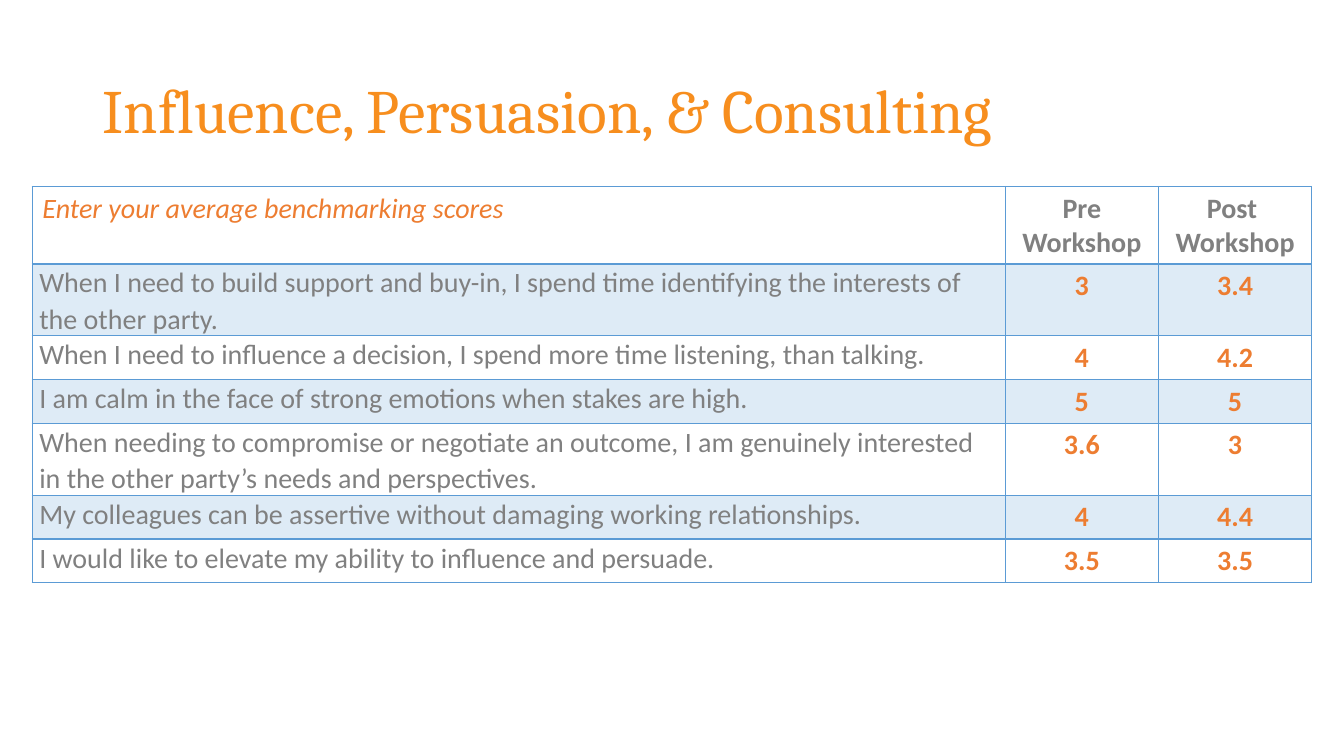
from dataclasses import dataclass
from typing import Any

from lxml import etree
from pptx import Presentation
from pptx.dml.color import RGBColor
from pptx.enum.text import MSO_ANCHOR, PP_ALIGN
from pptx.oxml.ns import qn
from pptx.util import Pt

LEFT, CENTER = PP_ALIGN.LEFT, PP_ALIGN.CENTER
MIDDLE = MSO_ANCHOR.MIDDLE
SCALE = 9144


@dataclass(frozen=True)
class Theme:
    title: str = "F78E1E"
    accent: str = "ED7D31"
    gray: str = "808080"
    blue: str = "5B9BD5"
    head: str = "Cambria"
    body: str = "Calibri"
    large: int = 44
    small: int = 20
    tint: int = 20


@dataclass(frozen=True)
class Score:
    text: str
    pre: str
    post: str


@dataclass(frozen=True)
class Style:
    font: dict[str, Any]
    color: str
    align: Any = LEFT
    space: float = 1.0


THEME = Theme()
BASE = {"name": THEME.body, "size": Pt(THEME.small), "bold": False, "italic": False}
TITLE = Style({"name": THEME.head, "size": Pt(THEME.large)}, THEME.title, space=0.9)
PROMPT = Style(BASE | {"italic": True}, THEME.accent)
LABEL = Style(BASE | {"bold": True}, THEME.gray, CENTER)
ITEM = Style(BASE, THEME.gray, space=1.07)
VALUE = Style(BASE | {"bold": True}, THEME.accent, CENTER)

COLS = (965, 152, 152)
ROW = 41
HEADS = ("Enter your average benchmarking scores", "Pre Workshop", "Post \nWorkshop")
SCORES = (
    Score("When I need to build support and buy-in, I spend time identifying "
          "the interests of the other party.", "3", "3.4"),
    Score("When I need to influence a decision, I spend more time listening, "
          "than talking.", "4", "4.2"),
    Score("I am calm in the face of strong emotions when stakes are high.", "5", "5"),
    Score("When needing to compromise or negotiate an outcome, I am genuinely "
          "interested in the other party’s needs and perspectives.", "3.6", "3"),
    Score("My colleagues can be assertive without damaging working "
          "relationships.", "4", "4.4"),
    Score("I would like to elevate my ability to influence and persuade.",
          "3.5", "3.5"),
)


def px(size: int) -> int:
    return size * SCALE


def apply(target: Any, values: dict[str, Any]) -> None:
    for name, value in values.items():
        setattr(target, name, value)


def write(frame: Any, text: str, style: Style) -> None:
    frame.text = text
    for para in frame.paragraphs:
        apply(para, {"alignment": style.align, "line_spacing": style.space})
        for run in para.runs:
            apply(run.font, style.font)
            run.font.color.rgb = RGBColor.from_string(style.color)


def shade(cell: Any, band: bool) -> None:
    if not band:
        cell.fill.background()
        return
    cell.fill.solid()
    cell.fill.fore_color.rgb = RGBColor.from_string(THEME.blue)
    color = cell._tc.tcPr.find(".//" + qn("a:srgbClr"))
    etree.SubElement(color, qn("a:alpha"), val=str(THEME.tint * 1000))


def edge(cell: Any, widths: dict[str, int]) -> None:
    for spot, (side, width) in enumerate(widths.items()):
        line = etree.Element(qn(f"a:ln{side}"), w=str(Pt(width)))
        fill = etree.SubElement(line, qn("a:solidFill"))
        etree.SubElement(fill, qn("a:srgbClr"), val=THEME.blue)
        cell._tc.tcPr.insert(spot, line)


def draw_title(slide: Any) -> None:
    box = slide.shapes.add_textbox(px(92), px(40), px(1150), px(145))
    apply(box.text_frame, {"word_wrap": True, "vertical_anchor": MIDDLE})
    write(box.text_frame, "Influence, Persuasion, & Consulting", TITLE)


def draw_table(slide: Any) -> None:
    rows = [HEADS] + [(item.text, item.pre, item.post) for item in SCORES]
    table = slide.shapes.add_table(
        len(rows), len(COLS), px(32), px(185), px(sum(COLS)), px(ROW * len(rows))
    ).table
    apply(table, {"first_row": False, "horz_banding": False})
    for col, width in zip(table.columns, COLS):
        col.width = px(width)
    for r, texts in enumerate(rows):
        table.rows[r].height = px(ROW)
        styles = (ITEM, VALUE, VALUE) if r else (PROMPT, LABEL, LABEL)
        for c, (text, style) in enumerate(zip(texts, styles)):
            cell = table.cell(r, c)
            write(cell.text_frame, text, style)
            if style is ITEM:
                apply(cell, {"margin_left": px(7), "margin_right": px(7),
                             "margin_top": 0, "margin_bottom": 0})
            shade(cell, r % 2 == 1)
            edge(cell, {"L": 1, "R": 1, "T": 2 if r == 1 else 1,
                        "B": 1 if r else 2})


def main() -> None:
    deck = Presentation()
    apply(deck, {"slide_width": px(1333), "slide_height": px(750)})
    slide = deck.slides.add_slide(deck.slide_layouts[6])
    draw_title(slide)
    draw_table(slide)
    deck.save("out.pptx")


if __name__ == "__main__":
    main()
